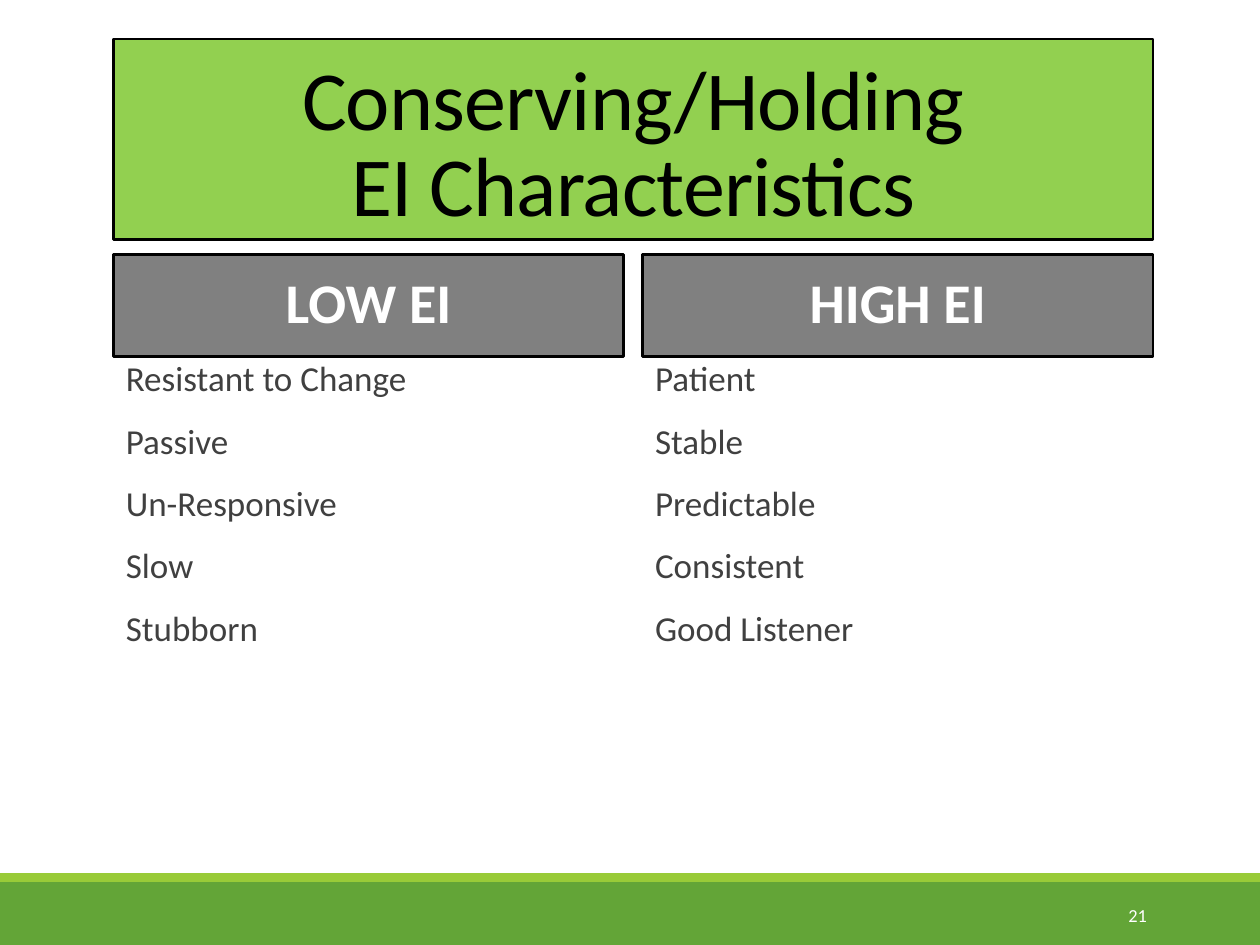
from pptx import Presentation
from pptx.dml.color import RGBColor
from pptx.enum.shapes import MSO_SHAPE
from pptx.enum.text import MSO_ANCHOR, PP_ALIGN
from pptx.util import Inches, Pt

WIDTH, HEIGHT = 10, 7.5
LEFT, COLUMN_WIDTH, GUTTER = 0.9, 4.05, 0.15
CONTENT_WIDTH = 2 * COLUMN_WIDTH + GUTTER
HEADING_TOP, LIST_TOP = 2.02, 2.82
BAND_TOP, STRIPE_HEIGHT = 7, 0.07

COLUMNS = [
    ("LOW EI", ["Resistant to Change", "Passive", "Un-Responsive", "Slow", "Stubborn"]),
    ("HIGH EI", ["Patient", "Stable", "Predictable", "Consistent", "Good Listener"]),
]


def color(value):
    return RGBColor.from_string(value)


def add_panel(page, left, top, width, height, fill, border=None):
    """Add a filled rectangle, outlined only when a border colour is given."""
    panel = page.shapes.add_shape(
        MSO_SHAPE.RECTANGLE, Inches(left), Inches(top), Inches(width), Inches(height))
    panel.shadow.inherit = False
    panel.fill.solid()
    panel.fill.fore_color.rgb = color(fill)
    if border:
        panel.line.color.rgb = color(border)
        panel.line.width = Pt(1.5)
    else:
        panel.line.fill.background()
    return panel


def add_text_box(page, left, top, width, height):
    return page.shapes.add_textbox(
        Inches(left), Inches(top), Inches(width), Inches(height))


def write(box, lines, size, ink, bold=False, align=PP_ALIGN.LEFT,
          anchor=MSO_ANCHOR.TOP, line_spacing=1.0, before=0, after=0, tracking=0):
    """Write one paragraph per line; tracking is in points."""
    frame = box.text_frame
    frame.word_wrap = True
    frame.vertical_anchor = anchor
    for index, line in enumerate(lines):
        para = frame.add_paragraph() if index else frame.paragraphs[0]
        para.text = line
        para.alignment = align
        para.line_spacing = line_spacing
        para.space_before, para.space_after = Pt(before), Pt(after)
        for span in para.runs:
            span.font.name = "Calibri"
            span.font.size = Pt(size)
            span.font.bold = bold
            span.font.color.rgb = color(ink)
            if tracking:
                span.font._element.set("spc", str(int(tracking * 100)))


def add_footer(page, number):
    add_panel(page, 0, BAND_TOP, WIDTH, HEIGHT - BAND_TOP, "63A537")
    add_panel(page, 0, BAND_TOP - STRIPE_HEIGHT, WIDTH, STRIPE_HEIGHT, "99CB38")
    box = add_text_box(page, 8.12, 7.06, 1.08, 0.4)
    write(box, [number], 10.5, "FFFFFF", align=PP_ALIGN.RIGHT, anchor=MSO_ANCHOR.MIDDLE)


def add_title(page, text):
    panel = add_panel(page, LEFT, 0.31, CONTENT_WIDTH, 1.59, "92D050", "000000")
    write(panel, [text], 48, "000000", align=PP_ALIGN.CENTER,
          anchor=MSO_ANCHOR.BOTTOM, line_spacing=0.85, tracking=-0.5)


def add_column(page, index, heading, traits):
    left = LEFT + index * (COLUMN_WIDTH + GUTTER)
    spacing = {"line_spacing": 0.9, "before": 12, "after": 2}
    panel = add_panel(page, left, HEADING_TOP, COLUMN_WIDTH, 0.81, "808080", "000000")
    write(panel, [heading], 32, "FFFFFF", bold=True, align=PP_ALIGN.CENTER,
          anchor=MSO_ANCHOR.MIDDLE, **spacing)
    box = add_text_box(page, left, LIST_TOP, COLUMN_WIDTH, 3.69)
    write(box, traits, 20, "404040", **spacing)


def main():
    deck = Presentation()
    deck.slide_width, deck.slide_height = Inches(WIDTH), Inches(HEIGHT)
    page = deck.slides.add_slide(deck.slide_layouts[6])
    add_footer(page, "21")
    add_title(page, "Conserving/Holding\vEI Characteristics")
    for index, (heading, traits) in enumerate(COLUMNS):
        add_column(page, index, heading, traits)
    deck.save("out.pptx")


if __name__ == "__main__":
    main()
